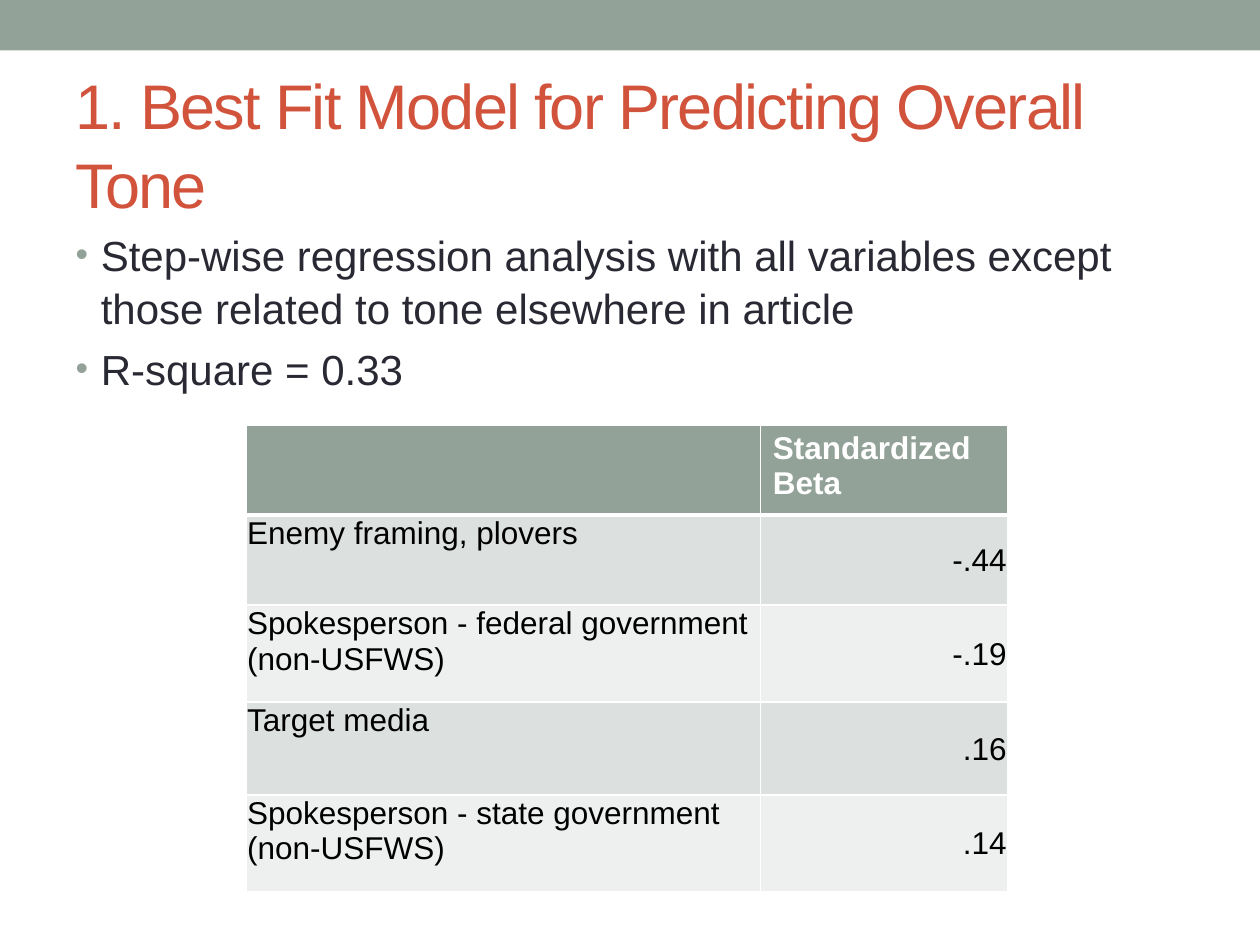
from dataclasses import dataclass

from lxml import etree
from pptx import Presentation
from pptx.dml.color import RGBColor
from pptx.enum.shapes import MSO_SHAPE
from pptx.enum.text import MSO_ANCHOR, MSO_AUTO_SIZE, PP_ALIGN
from pptx.oxml.ns import qn
from pptx.util import Pt

RECTANGLE = MSO_SHAPE.RECTANGLE
TOP, MIDDLE = MSO_ANCHOR.TOP, MSO_ANCHOR.MIDDLE
NO_AUTOFIT = MSO_AUTO_SIZE.NONE
LEFT, RIGHT = PP_ALIGN.LEFT, PP_ALIGN.RIGHT

COLORS = {
    "sage": "93A299",
    "title": "D2533C",
    "body": "292934",
    "white": "FFFFFF",
    "black": "000000",
    "odd_row": "DCE0DE",
    "even_row": "EEF0EF",
}
FONT = "Arial"
TEXT_LEFT, TEXT_WIDTH = 36, 648
LINE_SPACING = 1.05
COLUMN_WIDTHS = (294, 141.5)
CELL_INSET = 0.75
THIN_RULE, HEADER_RULE = 1, 3

TITLE = "1. Best Fit Model for Predicting Overall Tone"
FINDINGS = (
    "Step-wise regression analysis with all variables except "
    "those related to tone elsewhere in article",
    "R-square = 0.33",
)


@dataclass(frozen=True)
class Predictor:
    label: str
    beta: str
    height: float


HEADER = Predictor("", "Standardized Beta", 51.5)
PREDICTORS = (
    Predictor("Enemy framing, plovers", "-.44", 51.5),
    Predictor("Spokesperson - federal government (non-USFWS)", "-.19", 55.5),
    Predictor("Target media", ".16", 53),
    Predictor("Spokesperson - state government (non-USFWS)", ".14", 55.5),
)


def rgb(name: str) -> RGBColor:
    return RGBColor.from_string(COLORS[name])


def add_run(paragraph, text: str, size: float, color: str, bold: bool = False):
    run = paragraph.add_run()
    run.text = text
    run.font.name = FONT
    run.font.size = Pt(size)
    run.font.bold = bold
    run.font.color.rgb = rgb(color)
    return run


def place(placeholder, top: float, height: float, anchor) -> None:
    placeholder.left, placeholder.top = Pt(TEXT_LEFT), Pt(top)
    placeholder.width, placeholder.height = Pt(TEXT_WIDTH), Pt(height)
    frame = placeholder.text_frame
    frame.auto_size = NO_AUTOFIT
    frame.word_wrap = True
    frame.vertical_anchor = anchor


def set_bullet(paragraph, indent: float) -> None:
    properties = paragraph._p.get_or_add_pPr()
    properties.set("marL", str(Pt(indent)))
    properties.set("indent", str(Pt(-indent)))
    bullet_color = etree.SubElement(properties, qn("a:buClr"))
    etree.SubElement(bullet_color, qn("a:srgbClr"), val=COLORS["sage"])
    etree.SubElement(properties, qn("a:buSzPct"), val="85000")
    etree.SubElement(properties, qn("a:buFont"), typeface=FONT)
    etree.SubElement(properties, qn("a:buChar"), char="•")


def set_borders(cell, top: float, bottom: float) -> None:
    properties = cell._tc.get_or_add_tcPr()
    widths = {"lnL": THIN_RULE, "lnR": THIN_RULE, "lnT": top, "lnB": bottom}
    for side, width in widths.items():
        line = etree.SubElement(properties, qn(f"a:{side}"), w=str(Pt(width)))
        fill = etree.SubElement(line, qn("a:solidFill"))
        etree.SubElement(fill, qn("a:srgbClr"), val=COLORS["white"])


def add_banner(slide, width: int) -> None:
    banner = slide.shapes.add_shape(RECTANGLE, 0, 0, width, Pt(28.8))
    banner.shadow.inherit = False
    banner.fill.solid()
    banner.fill.fore_color.rgb = rgb("sage")
    banner.line.fill.background()


def fill_title(title) -> None:
    place(title, 42, 78, MIDDLE)
    paragraph = title.text_frame.paragraphs[0]
    paragraph.alignment = LEFT
    paragraph.line_spacing = LINE_SPACING
    run = add_run(paragraph, TITLE, 36, "title")
    run.font._element.set("spc", "-100")


def fill_findings(body) -> None:
    place(body, 126, 384, TOP)
    frame = body.text_frame
    for index, finding in enumerate(FINDINGS):
        paragraph = frame.add_paragraph() if index else frame.paragraphs[0]
        paragraph.line_spacing = LINE_SPACING
        paragraph.space_before = Pt(4.8)
        set_bullet(paragraph, 14.4)
        add_run(paragraph, finding, 24, "body")


def fill_cell(cell, text: str, row: int, is_beta: bool) -> None:
    is_header = row == 0
    set_borders(
        cell,
        HEADER_RULE if row == 1 else THIN_RULE,
        HEADER_RULE if is_header else THIN_RULE,
    )
    cell.fill.solid()
    band = "odd_row" if row % 2 else "even_row"
    cell.fill.fore_color.rgb = rgb("sage" if is_header else band)
    paragraph = cell.text_frame.paragraphs[0]
    if not is_header:
        cell.margin_left = cell.margin_right = cell.margin_top = Pt(CELL_INSET)
        cell.margin_bottom = 0
        cell.vertical_anchor = MIDDLE if is_beta else TOP
        paragraph.alignment = RIGHT if is_beta else LEFT
    if text:
        add_run(paragraph, text, 18, "white" if is_header else "black", is_header)


def add_beta_table(slide) -> None:
    rows = (HEADER, *PREDICTORS)
    table = slide.shapes.add_table(
        len(rows), len(COLUMN_WIDTHS), Pt(140.5), Pt(242.75),
        Pt(sum(COLUMN_WIDTHS)), Pt(sum(row.height for row in rows)),
    ).table
    for column, width in zip(table.columns, COLUMN_WIDTHS):
        column.width = Pt(width)
    for index, predictor in enumerate(rows):
        table.rows[index].height = Pt(predictor.height)
        fill_cell(table.cell(index, 0), predictor.label, index, False)
        fill_cell(table.cell(index, 1), predictor.beta, index, True)


def main() -> None:
    presentation = Presentation()
    presentation.slide_width, presentation.slide_height = Pt(720), Pt(540)
    slide = presentation.slides.add_slide(presentation.slide_layouts[1])
    add_banner(slide, presentation.slide_width)
    fill_title(slide.shapes.title)
    fill_findings(slide.placeholders[1])
    add_beta_table(slide)
    presentation.save("out.pptx")


if __name__ == "__main__":
    main()
